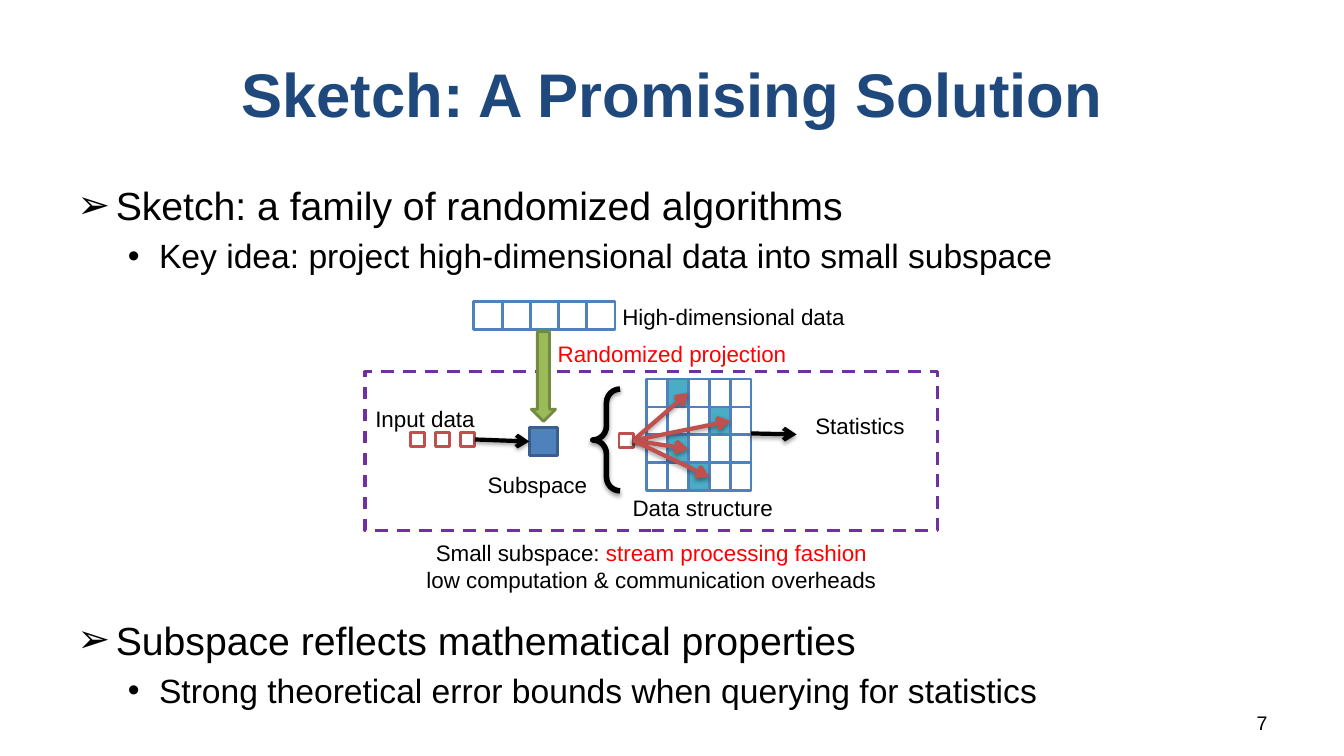
from pptx import Presentation
from pptx import util as u
from pptx.dml.color import RGBColor
from pptx.enum import dml, shapes, text
from pptx.oxml.ns import qn
from lxml import etree
from dataclasses import dataclass

# Content
TITLE = "Sketch: A Promising Solution"
PAGE = "7"
POINTS = [  # top, height, main point, detail
    (1.75, 1.2, "Sketch: a family of randomized algorithms",
     "Key idea: project high-dimensional data into small subspace"),
    (6.06, 1.08, "Subspace reflects mathematical properties",
     "Strong theoretical error bounds when querying for statistics"),
]
LABELS = [  # text, box, is key
    ("Randomized projection", (5.34, 3.33, 2.65, 0.37), True),
    ("Subspace", (4.64, 4.63, 1.38, 0.37), False),
    ("High-dimensional data", (5.96, 2.96, 2.63, 0.37), False),
    ("Statistics", (7.76, 4.04, 1.54, 0.37), False),
    ("Input data", (3.54, 3.97, 1.35, 0.37), False),
    ("Data structure", (5.82, 4.85, 2.3, 0.37), False),
]
NOTE = ("Small subspace: ", "stream processing fashion",
        "low computation & communication overheads")
HITS = [(0, 1), (1, 3), (2, 1), (3, 2)]  # row, column of marked cells
DIMS, INPUTS = 5, 3


@dataclass
class Theme:
    font: str = "Arial"
    title: str = "1F497D"
    ink: str = "000000"
    key: str = "FF0000"
    white: str = "FFFFFF"
    blue: str = "4F81BD"
    navy: str = "3A5F8C"
    teal: str = "4BACC6"
    red: str = "C0504D"
    frame: str = "7030A0"
    green: str = "9BBB59"
    moss: str = "738A42"
    head: int = 44
    main: int = 28
    sub: int = 24
    label: int = 16
    page: int = 14


T = Theme()
WIDE, TALL = 13.33, 7.5
EDGE, SPAN = 0.67, 12
FIELD = (3.62, 3.69, 5.68, 1.57)  # dashed frame
GRID = (6.41, 3.76, 1.04, 1.11)
ROWS, COLS = 4, 5
BOX, DOT, STEP = 0.28, 0.14, 0.25

deck = Presentation()
deck.slide_width, deck.slide_height = u.Inches(WIDE), u.Inches(TALL)
slide = deck.slides.add_slide(deck.slide_layouts[5])
parts = slide.shapes


def inch(box):
    return [u.Inches(v) for v in box]


def write(para, words, size=T.label, color=T.ink, bold=False, align="CENTER"):
    para.alignment = getattr(text.PP_ALIGN, align)
    run = para.add_run()
    run.text = words
    run.font.name, run.font.size, run.font.bold = T.font, u.Pt(size), bold
    run.font.color.rgb = RGBColor.from_string(color)


def area(box):
    frame = parts.add_textbox(*inch(box)).text_frame
    frame.word_wrap = True
    return frame


def bullet(para, mark, left, hang, gap):
    para.space_before = u.Pt(gap)
    props = para._p.get_or_add_pPr()
    props.set("marL", str(u.Inches(left)))
    props.set("indent", str(-u.Inches(hang)))
    etree.SubElement(props, qn("a:buFont"), typeface=T.font)
    etree.SubElement(props, qn("a:buChar"), char=mark)


def shade(part, alpha=0):
    """Give a part a soft shadow, or none when alpha is 0."""
    props = part._element.spPr
    list_ = props.find(qn("a:effectLst"))
    if list_ is None:
        list_ = etree.SubElement(props, qn("a:effectLst"))
    if alpha:
        cast = etree.SubElement(
            list_, qn("a:outerShdw"), blurRad=str(u.Pt(3.1)),
            dist=str(u.Pt(1.6)), dir="5400000", rotWithShape="0")
        tint = etree.SubElement(cast, qn("a:srgbClr"), val=T.ink)
        etree.SubElement(tint, qn("a:alpha"), val=str(alpha * 1000))


def draw(box, fill, line, width=2, kind="RECTANGLE"):
    part = parts.add_shape(getattr(shapes.MSO_SHAPE, kind), *inch(box))
    if fill:
        part.fill.solid()
        part.fill.fore_color.rgb = RGBColor.from_string(fill)
    else:
        part.fill.background()
    part.line.color.rgb = RGBColor.from_string(line)
    part.line.width = u.Pt(width)
    part.shadow.inherit = False
    return part


def arrow(color, start=None, end=None, ends=(0, 0, 0, 0), alpha=38):
    """Draw an arrow, joined right side of start to a side of end if given."""
    link = parts.add_connector(shapes.MSO_CONNECTOR.STRAIGHT, *inch(ends))
    if start:
        link.begin_connect(start, 3)
    if end:
        link.end_connect(*end)
    link.line.color.rgb = RGBColor.from_string(color)
    link.line.width = u.Pt(3)
    etree.SubElement(link.line._get_or_add_ln(), qn("a:tailEnd"), type="arrow")
    shade(link, alpha)


# Title, points and page number
title = parts.title
title.left, title.top, title.width, title.height = inch((EDGE, 0.3, SPAN, 1.25))
title.text_frame.vertical_anchor = text.MSO_ANCHOR.MIDDLE
write(title.text_frame.paragraphs[0], TITLE, size=T.head, color=T.title, bold=True)
for top, high, main, sub in POINTS:
    frame = area((EDGE, top, SPAN, high))
    para = frame.paragraphs[0]
    write(para, main, size=T.main, align="LEFT")
    bullet(para, "➢", 0.38, 0.38, 0)
    para = frame.add_paragraph()
    write(para, sub, size=T.sub, align="LEFT")
    bullet(para, "•", 0.81, 0.31, 5)
write(area((9.56, 7, 3.11, 0.35)).paragraphs[0], PAGE, size=T.page, align="RIGHT")

# Frame, labels and note
draw(FIELD, None, T.frame, 2.25).line.dash_style = dml.MSO_LINE.DASH
for words, box, key in LABELS:
    write(area(box).paragraphs[0], words, color=T.key if key else T.ink)
note = area((FIELD[0], 5.3, FIELD[2], 0.64))
write(note.paragraphs[0], NOTE[0])
write(note.paragraphs[0], NOTE[1], color=T.key)
write(note.add_paragraph(), NOTE[2])

# High-dimensional row, projected down to the subspace
for i in range(DIMS):
    draw((4.7 + i * BOX, 2.99, BOX, BOX), T.white, T.blue)
draw((5.27, 3.29, 0.24, 0.89), T.green, T.moss, kind="DOWN_ARROW")
space = draw((5.25, 4.24, BOX, BOX), T.blue, T.navy)

# Input stream
for i in range(INPUTS):
    item = draw((4.07 + i * STEP, 4.29, DOT, DOT), T.white, T.red)
arrow(T.ink, item, (space, 1))

# Data structure
x, y, wide, high = GRID
w, h = wide / COLS, high / ROWS
cells = {}
for r in range(ROWS):
    for c in range(COLS):
        fill = T.teal if (r, c) in HITS else T.white
        cells[r, c] = draw((x + c * w, y + r * h, w, h), fill, T.blue)
arrow(T.ink, ends=(x + wide, 4.3, 7.9, 4.31))

# One item hashed into a cell of each row
item = draw((6.14, 4.3, DOT, DOT), T.white, T.red)
for hit in HITS:
    arrow(T.red, item, (cells[hit], 3), alpha=35)
brace = draw((5.88, 3.86, 0.27, 1.01), None, T.ink, 4, "LEFT_BRACE")
brace.adjustments[0] = 0.51
shade(brace, 38)

deck.save("out.pptx")
